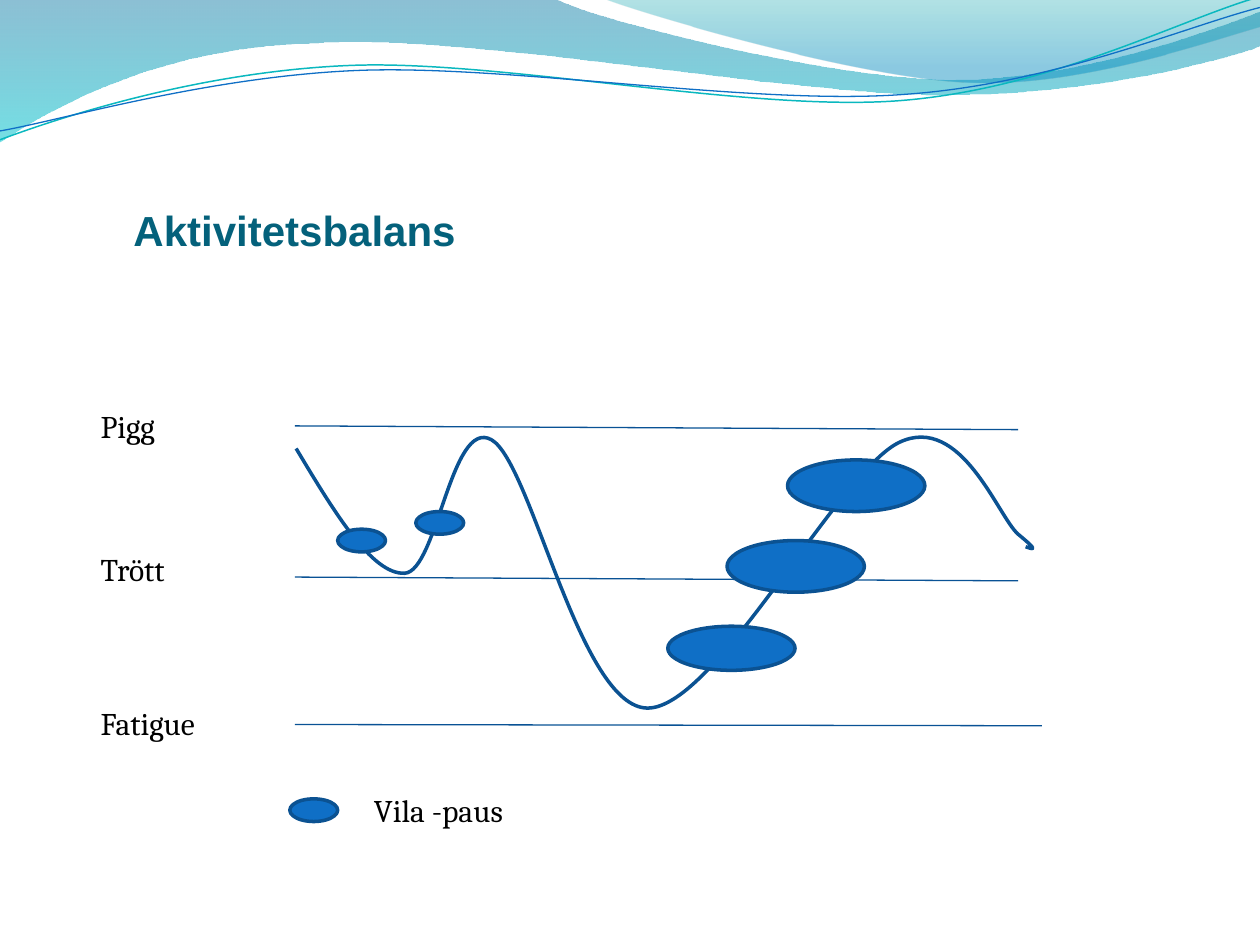
"""Build the slide on activity balance between rest and fatigue."""
import math

import lxml.etree
import pptx
import pptx.dml.color
import pptx.enum.shapes
import pptx.enum.text
import pptx.oxml.ns
import pptx.util

COLORS = {
    "title": "04617B", "text": "000000", "pause": "0F6FC6", "edge": "0B5292",
    "level": "095295", "aqua": "0AB8BF", "deep": "0074A1", "cyan": "00C6CF",
    "teal": "00A1A9", "sky": "008BBF",
}
WIDE_WAVE = [
    [(0, 0)], [(4.4, -0.01)], [(4.76, 0.17), (6.64, 0.63), (7.58, 0.63)],
    [(8.53, 0.63), (9.58, 0.26), (10, 0.09)], [(10.01, 0.36)],
    [(9.83, 0.44), (8.7, 0.76), (7.46, 0.75)],
    [(6.22, 0.75), (3.82, 0.28), (2.57, 0.34)],
    [(1.29, 0.36), (0.46, 0.83), (-0.01, 1.13)], [(0, 0)],
]
RIGHT_WAVE = [
    [(4.79, -0.01)], [(5.09, 0.11), (6.82, 0.62), (7.69, 0.65)],
    [(8.56, 0.69), (9.61, 0.32), (10, 0.21)], [(10, 0)], [(4.79, -0.01)],
]
AQUA_STRAND = [
    [(0, 1.11)], [(0.48, 0.93), (1.58, 0.57), (2.77, 0.52)],
    [(3.95, 0.47), (5.93, 0.89), (7.13, 0.8)],
    [(8.33, 0.71), (9.38, 0.15), (9.98, -0.02)],
]
BLUE_STRAND = [
    [(0, 1.04)], [(0.47, 0.96), (1.64, 0.61), (2.83, 0.56)],
    [(4.03, 0.51), (5.97, 0.84), (7.17, 0.75)],
    [(8.36, 0.67), (9.41, 0.21), (10, 0.06)],
]
ENERGY = [
    [(2.35, 3.56)], [(2.65, 4.06), (2.95, 4.56), (3.21, 4.55)],
    [(3.47, 4.54), (3.58, 3.31), (3.9, 3.49)],
    [(4.22, 3.67), (4.6, 5.62), (5.14, 5.62)],
    [(5.68, 5.62), (6.65, 3.74), (7.14, 3.51)],
    [(7.63, 3.28), (7.92, 4.1), (8.08, 4.24)],
    [(8.25, 4.38), (8.2, 4.36), (8.14, 4.34)],
]
STRAND_TILT = -2.7


def length(inches):
    return pptx.util.Cm(inches * 2.54)


def rgb(color):
    return pptx.dml.color.RGBColor.from_string(COLORS[color])


def level_out(path, tilt):
    """Turn a tilted path back to level, about the middle of its ends."""
    (x0, y0), (x1, y1) = path[0][-1], path[-1][-1]
    middle_x, middle_y = (x0 + x1) / 2, (y0 + y1) / 2
    sine, cosine = math.sin(math.radians(-tilt)), math.cos(math.radians(-tilt))
    return [[(middle_x + (x - middle_x) * cosine - (y - middle_y) * sine,
              middle_y + (x - middle_x) * sine + (y - middle_y) * cosine)
             for x, y in segment] for segment in path]


def write_text(frame, text, font="Cambria", size=18, color="text", bold=False):
    run = frame.paragraphs[0].add_run()
    run.text = text
    run.font.name = font
    run.font.size = pptx.util.Pt(size)
    run.font.bold = bold
    run.font.color.rgb = rgb(color)


class SlideArtist:
    def __init__(self, slide):
        self.shapes = slide.shapes
        self.pause_line = 2

    def outline(self, shape, color, width):
        shape.line.color.rgb = rgb(color)
        shape.line.width = pptx.util.Pt(width)

    def freeform(self, path, close):
        path = [[(length(x), length(y)) for x, y in segment] for segment in path]
        builder = self.shapes.build_freeform(*path[0][0], scale=1.0)
        builder.add_line_segments([segment[-1] for segment in path[1:]], close=close)
        shape = builder.convert_to_shape()
        shape.shadow.inherit = False
        sides = list(shape.element.iter(pptx.oxml.ns.qn("a:lnTo")))
        for side, segment in zip(sides, path[1:]):
            if len(segment) == 3:
                self.bend(side, [(x - shape.left, y - shape.top) for x, y in segment])
        return shape

    def bend(self, side, points):
        """Replace a straight side with a cubic Bézier curve."""
        bow = lxml.etree.Element(pptx.oxml.ns.qn("a:cubicBezTo"))
        for x, y in points:
            point = lxml.etree.SubElement(bow, pptx.oxml.ns.qn("a:pt"))
            point.set("x", str(x))
            point.set("y", str(y))
        side.getparent().replace(side, bow)

    def wave(self, path, stops):
        wave = self.freeform(path, close=True)
        wave.line.fill.background()
        wave.fill.gradient()
        wave.fill.gradient_angle = 270
        for stop, (_, color, _) in zip(wave.fill.gradient_stops, stops):
            stop.color.rgb = rgb(color)
        marks = wave.element.iter(pptx.oxml.ns.qn("a:gs"))
        for mark, (position, _, opacity) in zip(marks, stops):
            mark.set("pos", str(position * 1000))
            alpha = lxml.etree.SubElement(mark[0], pptx.oxml.ns.qn("a:alpha"))
            alpha.set("val", str(opacity * 1000))

    def curve(self, path, color, width, tilt=0):
        curve = self.freeform(level_out(path, tilt), close=False)
        curve.rotation = tilt
        curve.fill.background()
        self.outline(curve, color, width)

    def level(self, left, top, right, bottom):
        level = self.shapes.add_connector(
            pptx.enum.shapes.MSO_CONNECTOR.STRAIGHT,
            *map(length, (left, top, right, bottom)))
        self.outline(level, "level", 0.75)
        lxml.etree.SubElement(level.element.spPr, pptx.oxml.ns.qn("a:effectLst"))

    def pause(self, left, top, width, height):
        pause = self.shapes.add_shape(
            pptx.enum.shapes.MSO_SHAPE.OVAL,
            *map(length, (left, top, width, height)))
        pause.shadow.inherit = False
        pause.fill.solid()
        pause.fill.fore_color.rgb = rgb("pause")
        self.outline(pause, "edge", self.pause_line)

    def text_box(self, left, top, width, height):
        frame = self.shapes.add_textbox(
            *map(length, (left, top, width, height))).text_frame
        frame.word_wrap = True
        return frame

    def title(self, text):
        frame = self.text_box(1.06, 1.27, 6.53, 0.75)
        frame.margin_left = frame.margin_right = frame.margin_bottom = 0
        frame.vertical_anchor = pptx.enum.text.MSO_ANCHOR.BOTTOM
        write_text(frame, text, font="Arial", size=24, color="title", bold=True)

    def label(self, text, left, top, width):
        frame = self.text_box(left, top, width, 0.4)
        frame.auto_size = pptx.enum.text.MSO_AUTO_SIZE.SHAPE_TO_FIT_TEXT
        write_text(frame, text)


def main():
    deck = pptx.Presentation()
    deck.slide_width, deck.slide_height = length(10), length(7.5)
    artist = SlideArtist(deck.slides.add_slide(deck.slide_layouts[6]))

    artist.wave(WIDE_WAVE, [(0, "deep", 45), (100, "cyan", 55)])
    artist.wave(RIGHT_WAVE, [(0, "teal", 30), (80, "sky", 45)])
    artist.curve(AQUA_STRAND, "aqua", 0.85, STRAND_TILT)
    artist.curve(BLUE_STRAND, "pause", 0.75, STRAND_TILT)
    artist.title("Aktivitetsbalans")

    for top, right, bottom in [(3.38, 8.08, 3.41), (4.58, 8.08, 4.61), (5.75, 8.27, 5.76)]:
        artist.level(2.34, top, right, bottom)
    artist.curve(ENERGY, "edge", 2)
    for state, top, width in [("Pigg", 3.18, 1.3), ("Trött", 4.32, 1.42), ("Fatigue", 5.54, 1.42)]:
        artist.label(state, 0.7, top, width)

    for left, top in [(3.3, 4.06), (2.68, 4.2), (2.3, 6.34)]:
        artist.pause(left, top, 0.38, 0.18)
    artist.pause(5.3, 4.97, 1.01, 0.35)
    for left, top in [(5.77, 4.29), (6.25, 3.65)]:
        artist.pause(left, top, 1.09, 0.41)
    artist.label("Vila -paus", 2.87, 6.23, 1.96)

    deck.save("out.pptx")


if __name__ == "__main__":
    main()
